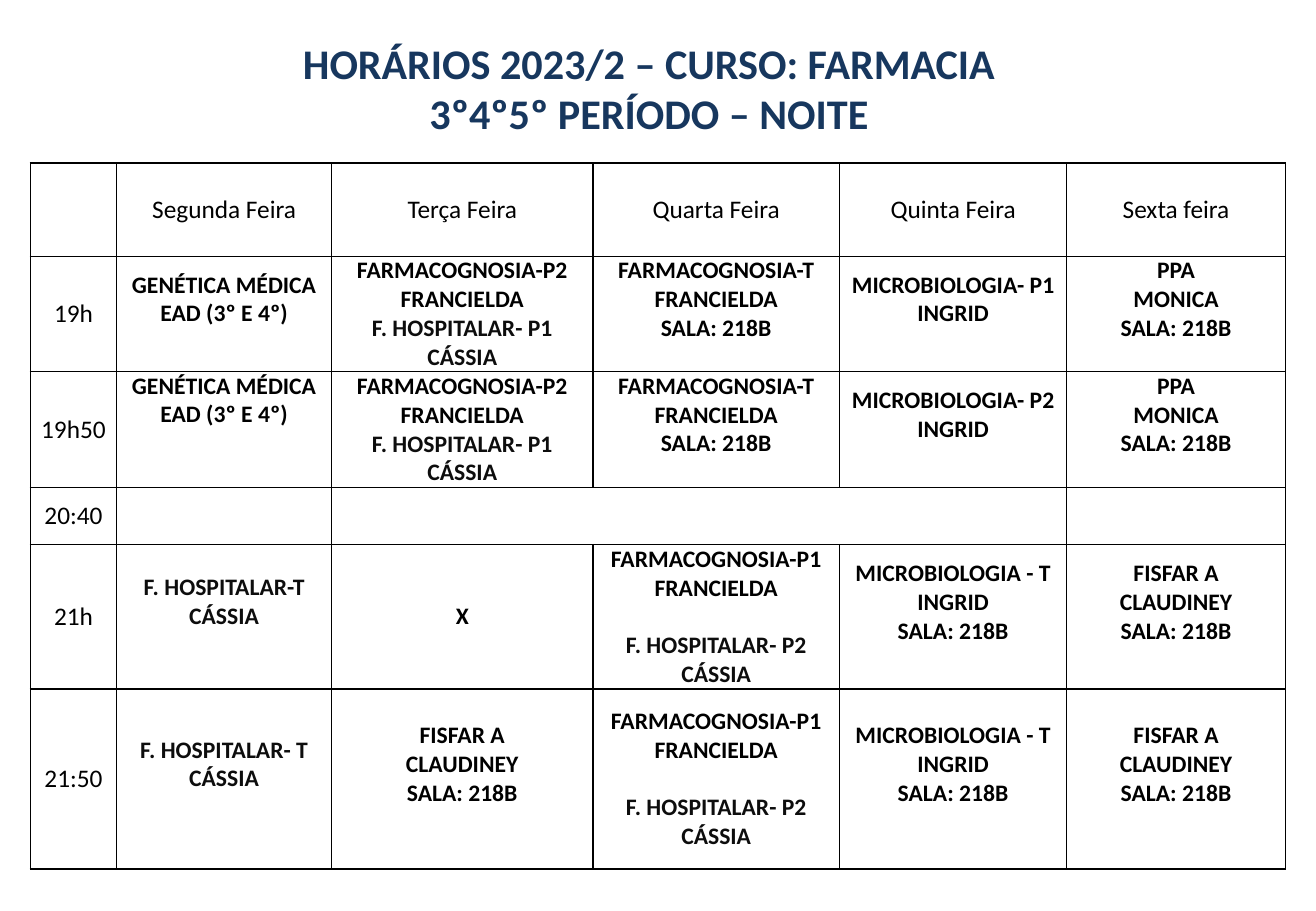
from lxml.etree import SubElement
from pptx import Presentation
from pptx.dml.color import RGBColor
from pptx.enum.text import MSO_ANCHOR, PP_ALIGN
from pptx.oxml.ns import qn
from pptx.util import Inches, Pt

FONT = "Calibri"
LINE = 0.24  # height of one 14 pt line, in inches
WIDTHS = [0.71, 1.77, 2.15, 2.03, 1.87, 1.8]
HEIGHTS = [0.77, 0.95, 0.95, 0.47, 1.19, 1.48]

# Classes that fill more than one slot
GENETICS = ["GENÉTICA MÉDICA", "EAD (3º E 4º)"]
COGNOSY = ["FARMACOGNOSIA-P2", "FRANCIELDA", "F. HOSPITALAR- P1", "CÁSSIA"]
THEORY = ["FARMACOGNOSIA-T", "FRANCIELDA", "SALA: 218B"]
PPA = ["PPA", "MONICA", "SALA: 218B"]
SPLIT = ["FARMACOGNOSIA-P1", "FRANCIELDA", "F. HOSPITALAR- P2", "CÁSSIA"]
MICRO = ["MICROBIOLOGIA - T", "INGRID", "SALA: 218B"]
FISFAR = ["FISFAR A", "CLAUDINEY", "SALA: 218B"]

ROWS = [
    [[], ["Segunda Feira"], ["Terça Feira"], ["Quarta Feira"],
     ["Quinta Feira"], ["Sexta feira"]],
    [["19h"], GENETICS, COGNOSY, THEORY, ["MICROBIOLOGIA- P1", "INGRID"], PPA],
    [["19h50"], GENETICS, COGNOSY, THEORY, ["MICROBIOLOGIA- P2", "INGRID"], PPA],
    [["20:40"], [], [], [], [], []],
    [["21h"], ["F. HOSPITALAR-T", "CÁSSIA"], ["X"], SPLIT, MICRO, FISFAR],
    [["21:50"], ["F. HOSPITALAR- T", "CÁSSIA"], FISFAR, SPLIT, MICRO, FISFAR],
]


def color(value):
    return RGBColor.from_string(value)


def write(frame, lines, size, bold, shade):
    """Write centred lines; the hospital class is a little lighter."""
    for i, line in enumerate(lines):
        para = frame.paragraphs[0] if i == 0 else frame.add_paragraph()
        para.alignment = PP_ALIGN.CENTER
        if line.startswith("F. HOSPITALAR"):
            shade = "0D0D0D"
            if lines is SPLIT:
                para.space_before = Pt(17)
        run = para.add_run()
        run.text = line
        font = run.font
        font.name, font.size, font.bold = FONT, Pt(size), bold
        font.color.rgb = color(shade)


def border(cell):
    props = cell._tc.get_or_add_tcPr()
    for side in ("a:lnL", "a:lnR", "a:lnT", "a:lnB"):
        line = SubElement(props, qn(side), w=str(Pt(1)))
        fill = SubElement(line, qn("a:solidFill"))
        SubElement(fill, qn("a:srgbClr"), val="000000")


def add_title(slide, left, top, width, height):
    title = slide.shapes.title
    title.left, title.top = Inches(left), Inches(top)
    title.width, title.height = Inches(width), Inches(height)
    frame = title.text_frame
    frame.word_wrap = True
    frame.vertical_anchor = MSO_ANCHOR.MIDDLE
    frame.margin_top = frame.margin_bottom = 0
    write(frame, ["HORÁRIOS 2023/2 – CURSO: FARMACIA", "3º4º5º PERÍODO – NOITE"],
          25, True, "17375E")


def add_grid(slide, left, top, width, height):
    table = slide.shapes.add_table(
        len(ROWS), len(WIDTHS), Inches(left), Inches(top),
        Inches(width), Inches(height)).table
    table.first_row = table.horz_banding = False
    for col, size in zip(table.columns, WIDTHS):
        col.width = Inches(size * width / sum(WIDTHS))
    for row, size in zip(table.rows, HEIGHTS):
        row.height = Inches(size * height / sum(HEIGHTS))

    for r, row in enumerate(ROWS):
        for c, lines in enumerate(row):
            cell = table.cell(r, c)
            border(cell)
            cell.fill.solid()
            cell.fill.fore_color.rgb = color("FFFFFF")
            cell.vertical_anchor = MSO_ANCHOR.MIDDLE
            cell.margin_left = cell.margin_right = Inches(0.05)
            cell.margin_top = cell.margin_bottom = 0
            label = r == 0 or c == 0
            # Short classes sit above the middle of their slot
            if not label and len(lines) in (2, 3):
                lift = 2 if r == 2 and lines is GENETICS else 1
                cell.margin_bottom = Inches(lift * LINE)
            write(cell.text_frame, lines, 15 if label else 14, not label, "000000")

    # Break from Tuesday to Thursday
    table.cell(3, 2).merge(table.cell(3, 4))


def main():
    deck = Presentation()
    deck.slide_width, deck.slide_height = Inches(10.83), Inches(7.5)
    slide = deck.slides.add_slide(deck.slide_layouts[5])
    add_title(slide, 0.3, 0.25, 10.08, 0.94)
    add_grid(slide, 0.25, 1.34, 10.33, 5.81)
    deck.save("out.pptx")


if __name__ == "__main__":
    main()
